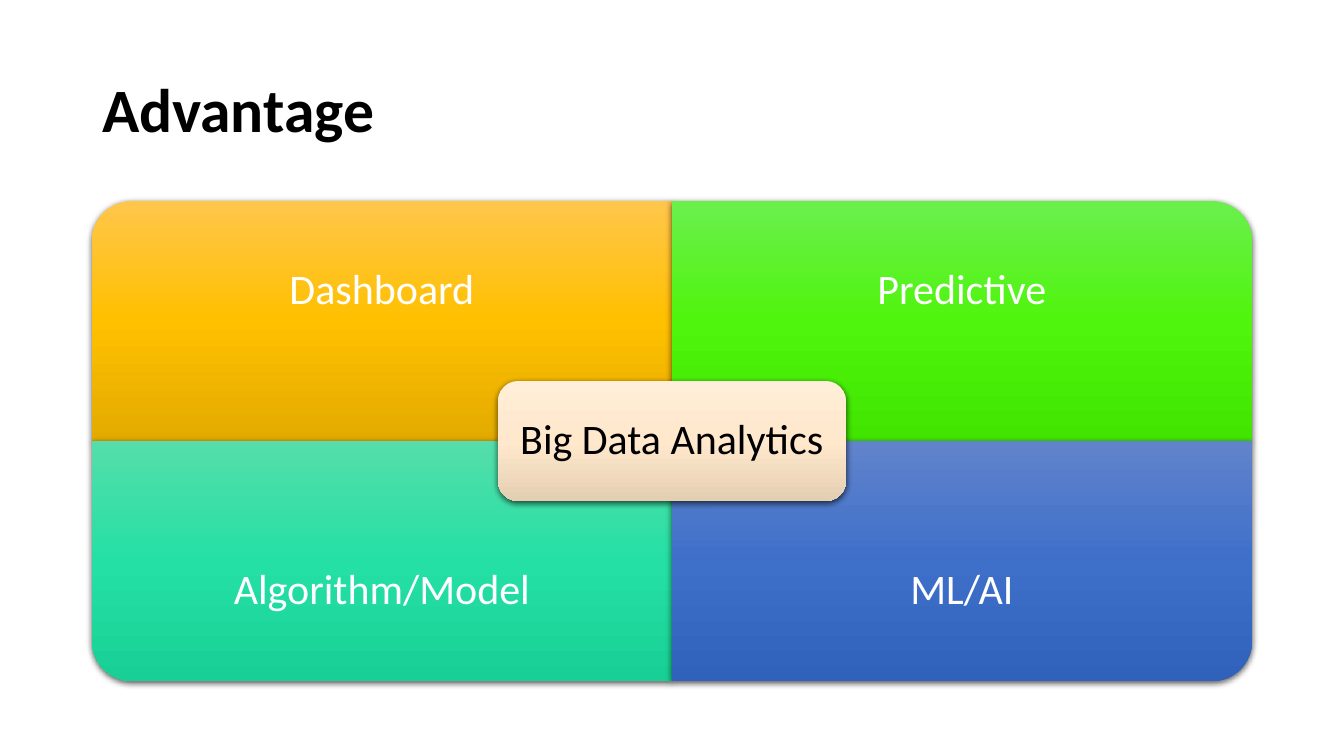
from lxml import etree
from pptx import Presentation
from pptx.dml.color import RGBColor
from pptx.enum.shapes import MSO_SHAPE
from pptx.enum.text import MSO_ANCHOR, MSO_AUTO_SIZE, PP_ALIGN
from pptx.oxml import parse_xml
from pptx.oxml.ns import nsdecls, qn
from pptx.util import Pt

TITLE = "Advantage"
QUADRANTS = [
    ("Dashboard", 0, 0, 270, ("FFC64B", "FFC000", "E3AB00")),
    ("Predictive", 1, 0, 0, ("6BEF4D", "4FF50D", "41E500")),
    ("Algorithm/Model", 0, 1, 180, ("55DDAB", "25E0A4", "18D095")),
    ("ML/AI", 1, 1, 90, ("6183CB", "3E70CA", "3062BB")),
]
HUB = ("Big Data Analytics", ("FFEED8", "FFE8CC", "E5CFB3"))

FONT = "Calibri"
BLACK, WHITE = "000000", "FFFFFF"
ROUND_ONE = MSO_SHAPE.ROUND_1_RECTANGLE
ROUND_ALL = MSO_SHAPE.ROUNDED_RECTANGLE
MIDDLE = MSO_ANCHOR.MIDDLE
NO_FIT = MSO_AUTO_SIZE.NONE
LEFT, CENTER = PP_ALIGN.LEFT, PP_ALIGN.CENTER
TITLE_ONLY = 5

PX = 9071
SLIDE_W, SLIDE_H = 1344, 756
GRID_X, GRID_Y = 92, 201
CELL_W, CELL_H = 580, 240
LABEL_H = 180
HUB_W, HUB_H = 348, 120
HUB_EDGE = 6


def px(*lengths):
    return [round(length * PX) for length in lengths]


def color(value):
    return RGBColor.from_string(value)


def format_text(box, text, size, text_color, align, bold=False):
    frame = box.text_frame
    frame.text = text
    frame.word_wrap = True
    frame.auto_size = NO_FIT
    frame.vertical_anchor = MIDDLE
    para = frame.paragraphs[0]
    para.alignment = align
    para.line_spacing = 0.9
    font = para.runs[0].font
    font.name, font.size, font.bold = FONT, Pt(size), bold
    font.color.rgb = color(text_color)


def add_panel(slide, kind, x, y, width, height, stops, rotation=0):
    if rotation % 180:
        x, y = x + (width - height) / 2, y + (height - width) / 2
        width, height = height, width
    panel = slide.shapes.add_shape(kind, *px(x, y, width, height))
    panel.rotation = rotation
    panel.line.fill.background()
    panel.fill.gradient()
    panel.fill.gradient_angle = 270
    gradient = panel.element.spPr.find(qn("a:gradFill"))
    gradient.set("rotWithShape", "0")
    stop_list = gradient.find(qn("a:gsLst"))
    for stop in list(stop_list):
        stop_list.remove(stop)
    for index, value in enumerate(stops):
        stop = etree.SubElement(stop_list, qn("a:gs"), pos=str(index * 50000))
        etree.SubElement(stop, qn("a:srgbClr"), val=value)
    panel.shadow.inherit = False
    panel.element.spPr.find(qn("a:effectLst")).append(parse_xml(
        f'<a:outerShdw {nsdecls("a")} blurRad="57150" dist="19050" dir="5400000" '
        'algn="ctr" rotWithShape="0"><a:srgbClr val="000000">'
        '<a:alpha val="63000"/></a:srgbClr></a:outerShdw>'))


def add_label(slide, text, x, y, width, height, inset, text_color):
    label = slide.shapes.add_textbox(*px(x, y, width, height))
    frame = label.text_frame
    frame.margin_left, frame.margin_top, frame.margin_right, frame.margin_bottom = px(*[inset] * 4)
    format_text(label, text, 30, text_color, CENTER)


def main():
    deck = Presentation()
    deck.slide_width, deck.slide_height = px(SLIDE_W, SLIDE_H)
    slide = deck.slides.add_slide(deck.slide_layouts[TITLE_ONLY])

    title = slide.shapes.title
    title.left, title.top, title.width, title.height = px(GRID_X, 40, 2 * CELL_W, 146)
    format_text(title, TITLE, 44, BLACK, LEFT, bold=True)

    for text, column, row, rotation, stops in QUADRANTS:
        x, y = GRID_X + column * CELL_W, GRID_Y + row * CELL_H
        add_panel(slide, ROUND_ONE, x, y, CELL_W, CELL_H, stops, rotation)
        label_y = y + row * (CELL_H - LABEL_H)
        add_label(slide, text, x, label_y, CELL_W, LABEL_H, 23, WHITE)

    text, stops = HUB
    x, y = GRID_X + CELL_W - HUB_W / 2, GRID_Y + CELL_H - HUB_H / 2
    add_panel(slide, ROUND_ALL, x, y, HUB_W, HUB_H, stops)
    add_label(slide, text, x + HUB_EDGE, y + HUB_EDGE,
              HUB_W - 2 * HUB_EDGE, HUB_H - 2 * HUB_EDGE, 12, BLACK)

    deck.save("out.pptx")


if __name__ == "__main__":
    main()
